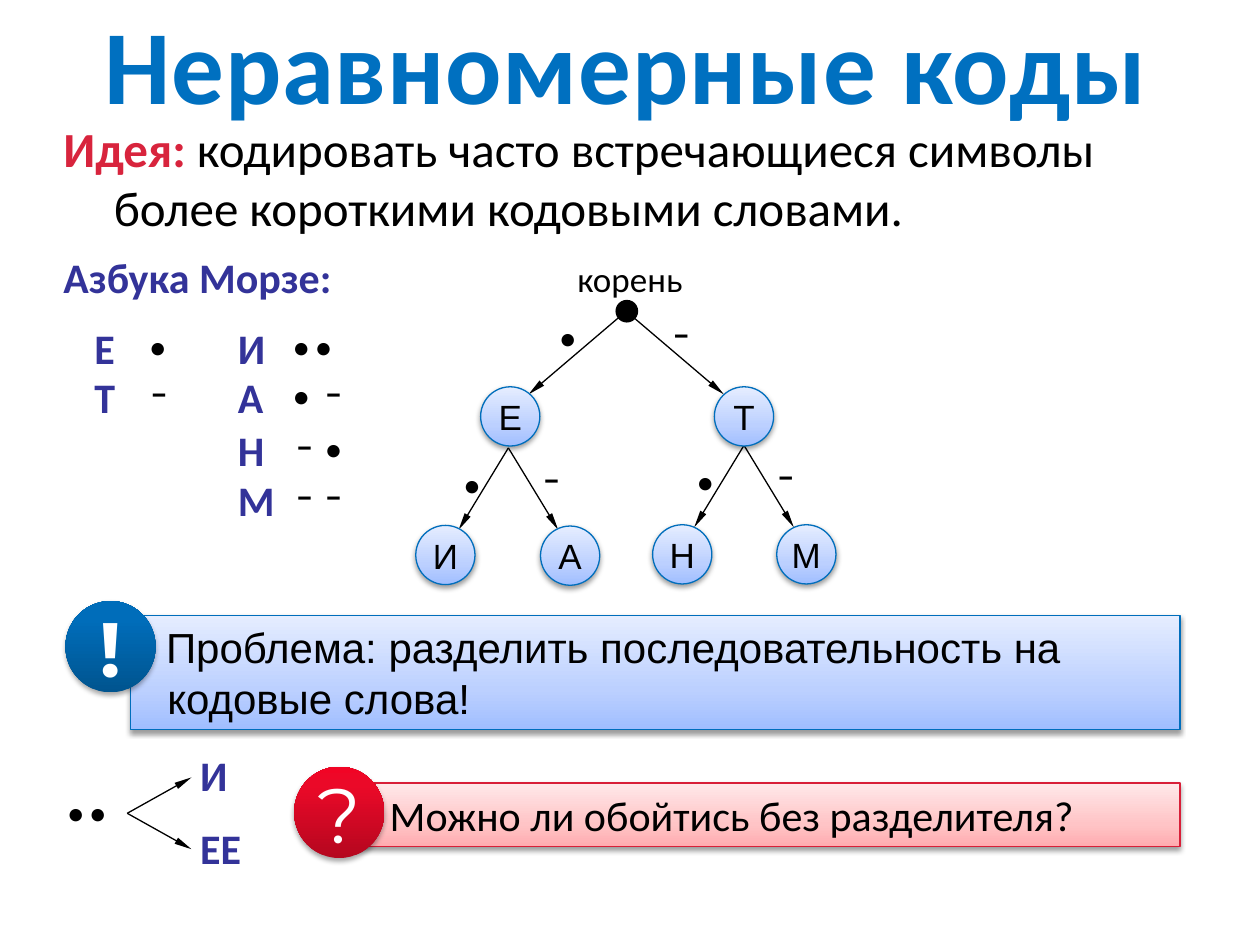
import copy

import pptx
import pptx.util
import pptx.dml.color
import pptx.enum.shapes
import pptx.enum.text
import pptx.oxml.ns
from lxml import etree

# Grid of 100 columns by 75 rows; all places are given in cells
COLS, ROWS = 100, 75
CELL = 0.1
NODE, MARK = 4.7, 3.55

BLACK, WHITE, NAVY, RED = "000000", "FFFFFF", "333399", "D8243D"
EDGE, RIM = "006EBC", "D81F38"
PALE = [(0, "A0BEFF"), (0.35, "BCD0FF"), (1, "E5EDFF")]
ROSE = [(0, "FFABAF"), (0.35, "FFC4C6"), (1, "FFE8E9")]
BLUE = [(0, "00548F"), (0.8, "006DBA"), (1, "006DBB")]
RUBY = [(0, "B5071F"), (0.8, "EB0928"), (1, "F10425")]
DOT, DASH = "•", "–"

OVAL = pptx.enum.shapes.MSO_SHAPE.OVAL
RECT = pptx.enum.shapes.MSO_SHAPE.RECTANGLE
LEFT = pptx.enum.text.PP_ALIGN.LEFT
MID = pptx.enum.text.PP_ALIGN.CENTER
TOP = pptx.enum.text.MSO_ANCHOR.TOP
HALF = pptx.enum.text.MSO_ANCHOR.MIDDLE
qn = pptx.oxml.ns.qn


def cells(*nums):
    return [pptx.util.Inches(n * CELL) for n in nums]


def color(code):
    return pptx.dml.color.RGBColor.from_string(code)


def text(shape, words, size=24, font="Calibri", ink=BLACK, bold=False, align=LEFT,
         anchor=TOP, wrap=True, inset=None, left=0, first=0, track=0):
    """Add a run to the first paragraph of a shape."""
    frame = shape.text_frame
    frame.word_wrap = wrap
    frame.vertical_anchor = anchor
    if inset is not None:
        frame.margin_left = frame.margin_right = inset
        frame.margin_top = frame.margin_bottom = inset
    para = frame.paragraphs[0]
    para.alignment = align
    props = para._p.get_or_add_pPr()
    props.set("marL", str(cells(left)[0]))
    props.set("indent", str(cells(first)[0]))
    run = para.add_run()
    run.text = words
    run.font.size = pptx.util.Pt(size)
    run.font.name = font
    run.font.bold = bold
    run.font.color.rgb = color(ink)
    if track:
        run._r.get_or_add_rPr().set("spc", str(track))


def box(slide, x, y, w, h):
    return slide.shapes.add_textbox(*cells(x, y, w, h))


def shade(shape, stops):
    """Fill upwards with a gradient of three stops."""
    shape.fill.gradient()
    shape.fill.gradient_angle = 90
    lst = shape._element.spPr.find(".//" + qn("a:gsLst"))
    lst.append(copy.deepcopy(lst[-1]))
    for stop, (pos, code) in zip(shape.fill.gradient_stops, stops):
        stop.position = pos
        stop.color.rgb = color(code)


def shadow(shape, alpha, dist):
    fx = shape._element.spPr.find(qn("a:effectLst"))
    drop = etree.SubElement(fx, qn("a:outerShdw"), dir="5400000", rotWithShape="0",
                            blurRad=str(pptx.util.Pt(3.1)),
                            dist=str(pptx.util.Pt(dist)))
    tint = etree.SubElement(drop, qn("a:srgbClr"), val=BLACK)
    etree.SubElement(tint, qn("a:alpha"), val=str(alpha * 1000))


def form(slide, kind, x, y, w, h, fill=None, edge=None):
    """Preset shape: fill is a hex string, gradient stops or None."""
    shape = slide.shapes.add_shape(kind, *cells(x, y, w, h))
    shape.shadow.inherit = False
    if fill is None:
        shape.fill.background()
    elif isinstance(fill, str):
        shape.fill.solid()
        shape.fill.fore_color.rgb = color(fill)
    else:
        shade(shape, fill)
    if edge:
        shape.line.color.rgb = color(edge)
        shape.line.width = pptx.util.Pt(0.75)
    else:
        shape.line.fill.background()
    return shape


def arrow(slide, x, y, dx, dy):
    kind = pptx.enum.shapes.MSO_CONNECTOR.STRAIGHT
    line = slide.shapes.add_connector(kind, *cells(x, y, x + dx, y + dy))
    line.line.color.rgb = color(BLACK)
    line.line.width = pptx.util.Pt(0.75)
    etree.SubElement(line.line._get_or_add_ln(), qn("a:tailEnd"),
                     type="triangle", w="sm", len="lg")
    etree.SubElement(line._element.spPr, qn("a:effectLst"))


def node(slide, letter, x, y):
    shape = form(slide, OVAL, x, y, NODE, NODE, PALE, EDGE)
    shadow(shape, 38, 1.6)
    text(shape, letter, size=20, font="Arial", align=MID, inset=0)


def mark(slide, sign, x, y, w=MARK):
    shape = form(slide, OVAL, x, y, w, MARK)
    text(shape, sign, size=20, bold=sign == DASH, align=MID, inset=0)


def label(slide, words, x, y, w=4.4):
    text(box(slide, x, y, w, 5), words, ink=NAVY, bold=True, wrap=False)


def banner(slide, words, x, y, w, h, fill, edge, font, left, first=0):
    shape = form(slide, RECT, x, y, w, h, fill, edge)
    shadow(shape, 38, 1.6)
    text(shape, words, font=font, left=left, first=first)


def badge(slide, sign, x, y, fill, bold):
    shape = form(slide, OVAL, x, y, 7.15, 7.25, fill)
    shadow(shape, 35, 1.8)
    text(shape, sign, size=44, font="Montserrat", ink=WHITE, bold=bold,
         align=MID, anchor=HALF, wrap=False)


def heads(slide):
    text(box(slide, 3.9, 2.35, 91.6, 5.2), "Неравномерные коды", size=60,
         ink="0070C0", bold=True, align=MID, anchor=HALF, track=50)
    idea = box(slide, 4.05, 8.9, 92.6, 10.4)
    hang = dict(size=28, left=4, first=-4)
    text(idea, "Идея: ", ink=RED, bold=True, **hang)
    text(idea, "кодировать часто встречающиеся символы более короткими "
         "кодовыми словами.", **hang)
    label(slide, "Азбука Морзе:", 4.05, 19.5, 26.9)


def tree(slide):
    # Each fork: apex, reach to either side, drop
    for x, y, dx, dy in [(49.7, 24.7, 7.75, 6.6), (40.35, 35.55, 3.95, 6.5),
                         (59.05, 35.35, 3.95, 6.5)]:
        for side in (-1, 1):
            arrow(slide, x, y, side * dx, dy)
    form(slide, OVAL, 48.9, 23.85, 1.7, 1.7, BLACK, BLACK)
    mark(slide, "корень", 43.1, 19.9, 13.8)
    for sign, x, y in [(DOT, 43.3, 24.5), (DASH, 52.3, 24.2), (DOT, 35.7, 36.2),
                       (DASH, 42, 35.7), (DOT, 54.2, 35.95), (DASH, 60.6, 35.5)]:
        mark(slide, sign, x, y)
    for letter, x, y in [("Е", 38.15, 30.7), ("Т", 56.7, 30.7), ("И", 33, 41.7),
                         ("А", 42.9, 41.75), ("Н", 51.8, 41.65), ("М", 61.65, 41.65)]:
        node(slide, letter, x, y)


def morse(slide):
    # Letter, place, then its signs with their distance from the letter
    code = [("Е", 6.5, 25.1, [(DOT, 4.25)]),
            ("Т", 6.5, 29, [(DASH, 4.35)]),
            ("И", 17.9, 25.1, [(DOT, 4.25), (DOT, 6)]),
            ("А", 17.9, 29, [(DOT, 4.25), (DASH, 6.8)]),
            ("Н", 17.9, 33.2, [(DASH, 4.5), (DOT, 6.8)]),
            ("М", 17.9, 37.15, [(DASH, 4.5), (DASH, 6.8)])]
    for letter, x, y, _ in code:
        label(slide, letter, x, y)
    # Column by column, so that signs of one row stay apart
    for turn in (1, 0):
        for _, x, y, signs in code:
            for sign, gap in signs[turn:turn + 1]:
                mark(slide, sign, x + gap, y + (0.15 if sign == DOT else -0.1))


def split(slide):
    for x in (4.25, 6):
        mark(slide, DOT, x, 62.2)
    for side in (-1, 1):
        arrow(slide, 10.1, 64.55, 5.1, side * 2.85)
    label(slide, "И", 14.9, 59)
    label(slide, "ЕЕ", 14.9, 64.8, 6.5)


def main():
    deck = pptx.Presentation()
    deck.slide_width, deck.slide_height = cells(COLS, ROWS)
    slide = deck.slides.add_slide(deck.slide_layouts[6])
    heads(slide)
    tree(slide)
    morse(slide)
    # Problem and question
    banner(slide, "Проблема: разделить последовательность на кодовые слова!",
           10.35, 48.85, 83.3, 9.05, PALE, EDGE, "Arial", 1.95, -0.1)
    badge(slide, "!", 5.2, 47.7, BLUE, True)
    split(slide)
    banner(slide, "Можно ли обойтись без разделителя?",
           28.5, 62.15, 65.15, 5.05, ROSE, RIM, "Calibri", 1.45)
    badge(slide, "?", 23.35, 60.85, RUBY, False)
    deck.save("out.pptx")


if __name__ == "__main__":
    main()
